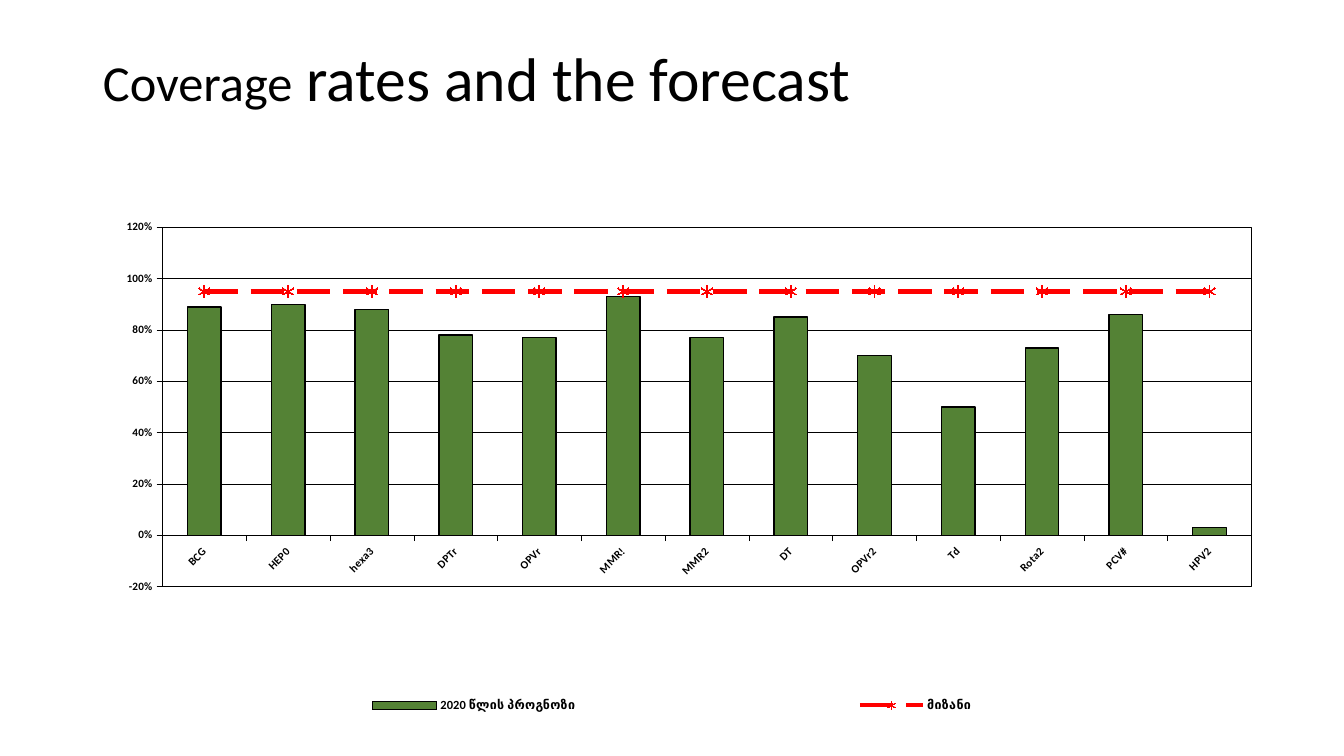
"""Build a slide with a combined column and line chart of coverage rates."""
from pptx import Presentation
from pptx.chart.data import CategoryChartData
from pptx.dml.color import RGBColor
from pptx.enum.chart import XL_CHART_TYPE, XL_LEGEND_POSITION, XL_MARKER_STYLE, XL_TICK_MARK
from pptx.enum.dml import MSO_LINE
from pptx.enum.text import MSO_ANCHOR
from pptx.oxml import parse_xml
from pptx.oxml.ns import nsdecls
from pptx.util import Pt

COLUMNS = XL_CHART_TYPE.COLUMN_CLUSTERED
RIGHT = XL_LEGEND_POSITION.RIGHT
STAR = XL_MARKER_STYLE.STAR
OUTSIDE, NO_TICK = XL_TICK_MARK.OUTSIDE, XL_TICK_MARK.NONE
LONG_DASH = MSO_LINE.LONG_DASH
MIDDLE = MSO_ANCHOR.MIDDLE

TITLE = [("Coverage", 36), (" rates and the forecast", 44)]
COVERAGE = {
    "BCG": 0.89, "HEP0": 0.9, "hexa3": 0.88, "DPTr": 0.78, "OPVr": 0.77,
    "MMR!": 0.93, "MMR2": 0.77, "DT": 0.85, "OPVr2": 0.7, "Td": 0.5,
    "Rota2": 0.73, "PCV#": 0.86, "HPV2": 0.03,
}
FORECAST_NAME, TARGET_NAME = "2020 წლის პროგნოზი", "მიზანი"
TARGET = 0.95
FONT = "Calibri"
BLACK, GREEN, RED = "000000", "548235", "FF0000"
SLIDE = (1344, 756)
TITLE_BOX = (93, 40, 1159, 84)
CHART_BOX = (93, 136, 1159, 609)
PLOT_LAYOUT = (0.06, 0.15, 0.94, 0.59)
LEGEND_LAYOUT = (0, 0.9, 1, 0.07)
EMU_PER_PX = 914400 / 100.8


def px(*lengths):
    return [round(n * EMU_PER_PX) for n in lengths]


def rgb(color):
    return RGBColor.from_string(color)


def set_font(font, size, bold=True):
    font.name, font.size, font.bold = FONT, Pt(size), bold
    font.color.rgb = rgb(BLACK)


def set_line(line, color, width):
    line.color.rgb = rgb(color)
    line.width = Pt(width)


def make_layout(box, inner=False):
    target = '<c:layoutTarget val="inner"/>' if inner else ""
    sizes = "".join(f'<c:{k} val="{v}"/>' for k, v in zip("xywh", box))
    return parse_xml(
        f'<c:layout {nsdecls("c")}><c:manualLayout>{target}<c:xMode val="edge"/>'
        f'<c:yMode val="edge"/>{sizes}</c:manualLayout></c:layout>')


def move_to_line_plot(plot_area):
    bars = plot_area.xpath("c:barChart")[0]
    ser = bars.xpath("c:ser")[1]
    for flag in ser.xpath("c:invertIfNegative"):
        ser.remove(flag)
    lines = parse_xml(
        f'<c:lineChart {nsdecls("c")}><c:grouping val="standard"/>'
        '<c:varyColors val="0"/><c:marker val="1"/></c:lineChart>')
    lines.insert(2, ser)
    for axis_id in bars.xpath("c:axId"):
        lines.append(parse_xml(f'<c:axId {nsdecls("c")} val="{axis_id.get("val")}"/>'))
    bars.addnext(lines)


def add_title(s):
    tf = s.shapes.add_textbox(*px(*TITLE_BOX)).text_frame
    tf.word_wrap = True
    tf.vertical_anchor = MIDDLE
    p = tf.paragraphs[0]
    p.line_spacing = 0.9
    p.font.name = FONT
    p.font.color.rgb = rgb(BLACK)
    for text, size in TITLE:
        r = p.add_run()
        r.text = text
        r.font.size = Pt(size)


def style_axes(chart):
    values, cats = chart.value_axis, chart.category_axis
    for axis in (values, cats):
        axis.major_tick_mark, axis.minor_tick_mark = OUTSIDE, NO_TICK
        set_font(axis.tick_labels.font, 8)
        set_line(axis.format.line, BLACK, 0.25)
    values.minimum_scale, values.maximum_scale, values.major_unit = -0.2, 1.2, 0.2
    values.tick_labels.number_format = "0%"
    values.tick_labels.number_format_is_linked = False
    values.has_major_gridlines = True
    set_line(values.major_gridlines.format.line, BLACK, 0.25)
    body = cats._element.xpath("c:txPr/a:bodyPr")[0]
    body.set("rot", "-2700000")
    body.set("vert", "horz")


def style_series(chart):
    columns, lines = chart.plots
    columns.gap_width = 150
    columns.vary_by_categories = False
    forecast, target = columns.series[0], lines.series[0]
    forecast.format.fill.solid()
    forecast.format.fill.fore_color.rgb = rgb(GREEN)
    set_line(forecast.format.line, BLACK, 1)
    set_line(target.format.line, RED, 3)
    target.format.line.dash_style = LONG_DASH
    target.smooth = False
    target.marker.style, target.marker.size = STAR, 8
    target.marker.format.fill.background()
    set_line(target.marker.format.line, RED, 0.75)


def add_coverage_chart(s):
    data = CategoryChartData(number_format="0%")
    data.categories = list(COVERAGE)
    data.add_series(FORECAST_NAME, list(COVERAGE.values()))
    data.add_series(TARGET_NAME, [TARGET] * len(COVERAGE))
    chart = s.shapes.add_chart(COLUMNS, *px(*CHART_BOX), data).chart
    chart.has_title = False
    set_font(chart.font, 10.8)

    plot_area = chart._chartSpace.xpath("c:chart/c:plotArea")[0]
    for old in plot_area.xpath("c:layout"):
        plot_area.remove(old)
    plot_area.insert(0, make_layout(PLOT_LAYOUT, inner=True))
    plot_area.append(parse_xml(
        f'<c:spPr {nsdecls("c", "a")}><a:noFill/><a:ln w="9525"><a:solidFill>'
        f'<a:srgbClr val="{BLACK}"/></a:solidFill></a:ln></c:spPr>'))
    move_to_line_plot(plot_area)
    style_axes(chart)
    style_series(chart)

    chart.has_legend = True
    legend = chart.legend
    legend.position = RIGHT
    legend.include_in_layout = False
    set_font(legend.font, 8.9)
    for old in legend._element.xpath("c:layout"):
        legend._element.remove(old)
    legend._element.xpath("c:legendPos")[0].addnext(make_layout(LEGEND_LAYOUT))


def main():
    prs = Presentation()
    prs.slide_width, prs.slide_height = px(*SLIDE)
    s = prs.slides.add_slide(prs.slide_layouts[6])
    add_title(s)
    add_coverage_chart(s)
    prs.save("out.pptx")


if __name__ == "__main__":
    main()
